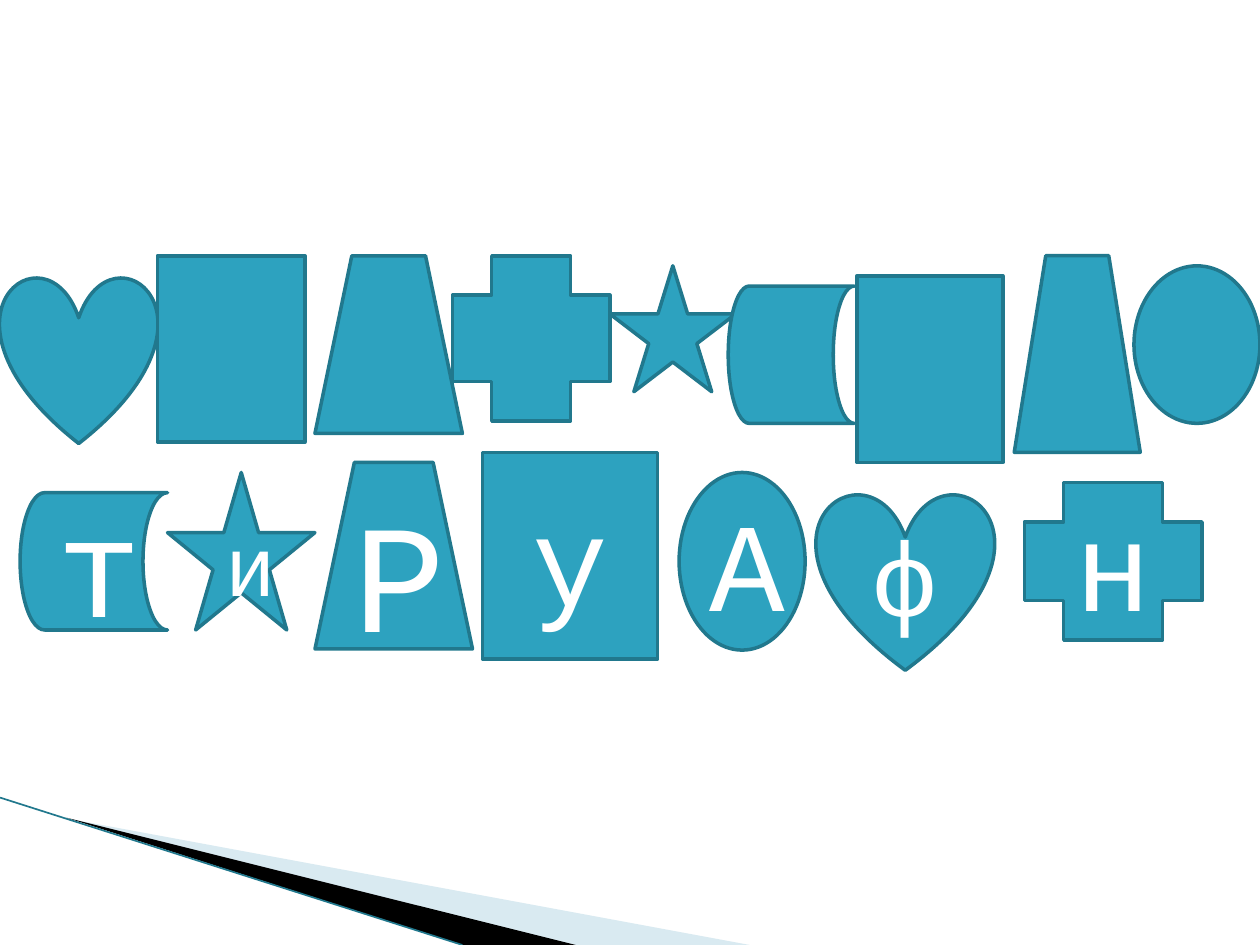
"""Build a slide of shapes, some of them carrying letters."""
from dataclasses import dataclass

from lxml import etree
from pptx import Presentation
from pptx.dml.color import RGBColor
from pptx.enum import shapes as sh, text as tx
from pptx.oxml import ns
from pptx.util import Inches, Pt

KIND = sh.MSO_SHAPE


@dataclass(frozen=True)
class Theme:
    fill: str = "2DA2BF"
    edge: str = "21788D"
    ink: str = "FFFFFF"
    pale: str = "A0CBDC"
    dark: str = "000000"
    font: str = "Courier New"
    line: float = 2
    thin: float = 0.95
    small: int = 48
    mid: int = 60
    large: int = 72
    huge: int = 80
    giant: int = 88


@dataclass(frozen=True)
class Tile:
    kind: KIND
    left: float
    top: float
    width: float
    height: float
    char: str = ""
    size: int = 0


@dataclass(frozen=True)
class Wedge:
    points: tuple
    color: str
    alpha: int = 100


LOOK = Theme()

WEDGES = (
    Wedge(((0.55, 6.5), (5.95, 7.5), (4.56, 7.5)), LOOK.pale, 40),
    Wedge(((0.53, 6.49), (4.57, 7.5), (3.67, 7.5)), LOOK.dark),
)

TILES = (
    Tile(KIND.HEART, 0, 2.19, 1.25, 1.33),
    Tile(KIND.RECTANGLE, 1.25, 2.03, 1.17, 1.48),
    Tile(KIND.CROSS, 3.59, 2.03, 1.25, 1.31),
    Tile(KIND.STAR_5_POINT, 4.84, 2.11, 1, 1),
    Tile(KIND.FLOWCHART_STORED_DATA, 5.78, 2.27, 1, 1.09),
    Tile(KIND.OVAL, 9, 2.11, 1, 1.25),
    Tile(KIND.HEART, 6.48, 3.91, 1.41, 1.41, "ф", LOOK.mid),
    Tile(KIND.RECTANGLE, 3.83, 3.59, 1.39, 1.64, "у", LOOK.large),
    Tile(KIND.STAR_5_POINT, 1.33, 3.75, 1.17, 1.25, "и", LOOK.small),
    Tile(KIND.FLOWCHART_STORED_DATA, 0.16, 3.91, 1.17, 1.09, "т", LOOK.huge),
    Tile(KIND.CROSS, 8.13, 3.83, 1.41, 1.25, "н", LOOK.large),
    Tile(KIND.TRAPEZOID, 2.5, 3.67, 1.25, 1.48, "Р", LOOK.giant),
    Tile(KIND.OVAL, 5.39, 3.75, 1, 1.41, "А", LOOK.large),
    Tile(KIND.RECTANGLE, 6.8, 2.19, 1.16, 1.48),
    Tile(KIND.TRAPEZOID, 8.05, 2.03, 1, 1.56),
    Tile(KIND.TRAPEZOID, 2.5, 2.03, 1.17, 1.41),
)


def paint(shape, color: str) -> None:
    """Give a shape a solid fill and no shadow."""
    shape.shadow.inherit = False
    shape.fill.solid()
    shape.fill.fore_color.rgb = RGBColor.from_string(color)


def draw_wedge(slide, wedge: Wedge) -> None:
    """Draw a borderless polygon, clear in part if asked."""
    start, *rest = [(Inches(x), Inches(y)) for x, y in wedge.points]
    pen = slide.shapes.build_freeform(*start)
    pen.add_line_segments(rest, close=True)
    shape = pen.convert_to_shape()
    paint(shape, wedge.color)
    shape.line.fill.background()
    if wedge.alpha < 100:
        tone = shape.fill._xPr.find(".//" + ns.qn("a:srgbClr"))
        etree.SubElement(tone, ns.qn("a:alpha"), val=str(wedge.alpha * 1000))


def draw_edge(slide) -> None:
    """Draw the thin line along the corner wedge."""
    line = slide.shapes.add_connector(
        sh.MSO_CONNECTOR.STRAIGHT,
        Inches(0), Inches(6.33), Inches(3.67), Inches(7.5))
    line.line.color.rgb = RGBColor.from_string(LOOK.edge)
    line.line.width = Pt(LOOK.thin)
    etree.SubElement(line._element.spPr, ns.qn("a:effectLst"))


def draw_tile(slide, tile: Tile) -> None:
    """Draw one shape and its letter, if any."""
    box = map(Inches, (tile.left, tile.top, tile.width, tile.height))
    shape = slide.shapes.add_shape(tile.kind, *box)
    paint(shape, LOOK.fill)
    shape.line.color.rgb = RGBColor.from_string(LOOK.edge)
    shape.line.width = Pt(LOOK.line)
    if tile.char:
        frame = shape.text_frame
        frame.text = tile.char
        frame.vertical_anchor = tx.MSO_ANCHOR.MIDDLE
        para = frame.paragraphs[0]
        para.alignment = tx.PP_ALIGN.CENTER
        para.font.name = LOOK.font
        para.font.size = Pt(tile.size)
        para.font.color.rgb = RGBColor.from_string(LOOK.ink)


def main() -> None:
    """Build and save the slide."""
    deck = Presentation()
    deck.slide_width, deck.slide_height = Inches(10), Inches(7.5)
    slide = deck.slides.add_slide(deck.slide_layouts[6])
    for wedge in WEDGES:
        draw_wedge(slide, wedge)
    draw_edge(slide)
    for tile in TILES:
        draw_tile(slide, tile)
    deck.save("out.pptx")


if __name__ == "__main__":
    main()
